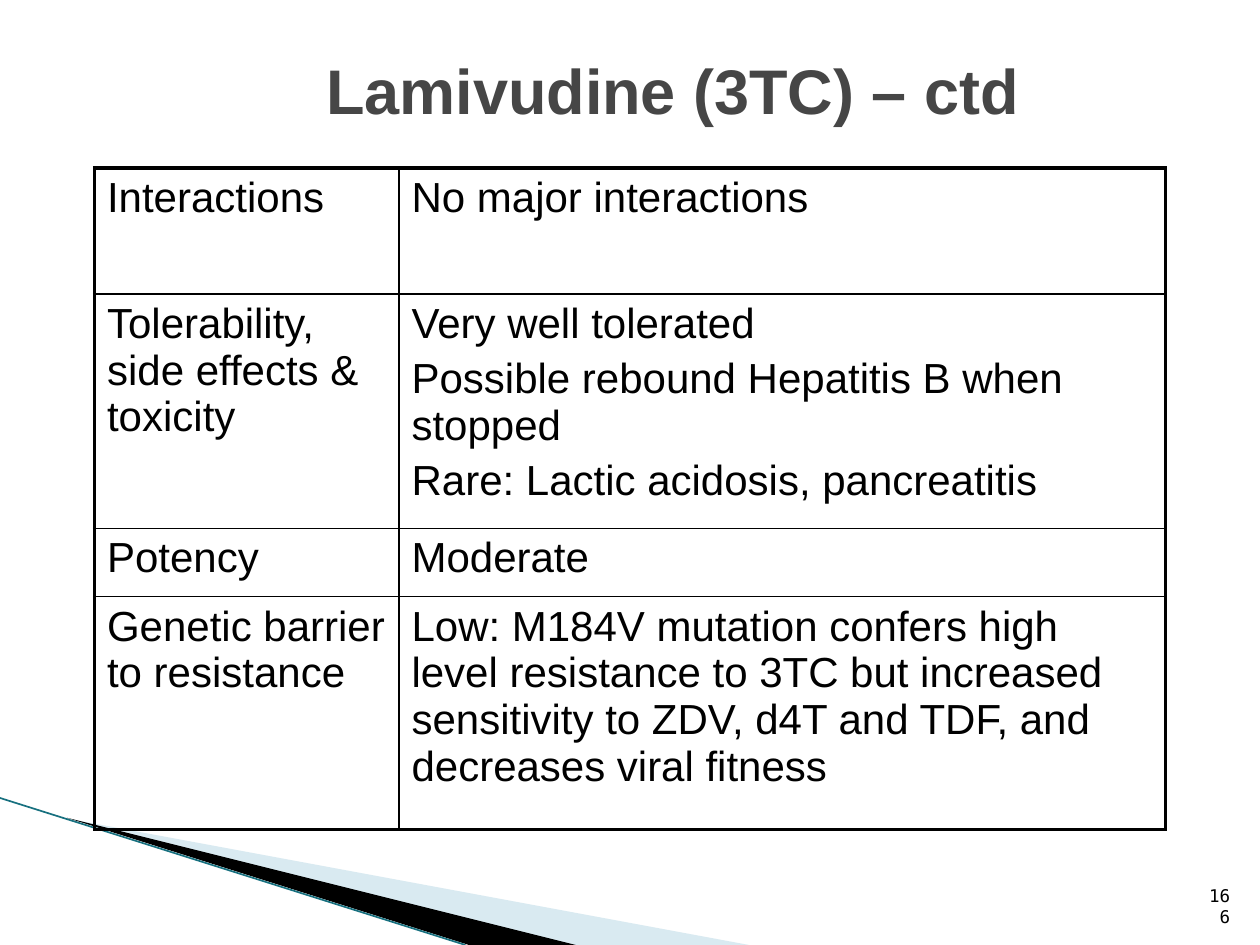
from lxml import etree
from pptx import Presentation
from pptx.dml.color import RGBColor
from pptx.enum import shapes, text
from pptx.oxml.ns import qn
from pptx.util import Pt

# Content
TITLE = "Lamivudine (3TC) – ctd"
PAGE = "166"
ROWS = [
    (72, ["Interactions"], ["No major interactions"]),
    (134, ["Tolerability, side effects & toxicity"],
     ["Very well tolerated",
      "Possible rebound Hepatitis B when stopped",
      "Rare: Lactic acidosis, pancreatitis"]),
    (39, ["Potency"], ["Moderate"]),
    (133, ["Genetic barrier to resistance"],
     ["Low: M184V mutation confers high level resistance to 3TC but increased "
      "sensitivity to ZDV, d4T and TDF, and decreases viral fitness"]),
]
COLS = [174, 438]

C = {"title": "464646", "ink": "000000", "pale": "A0CBDC", "edge": "17707F"}
WEDGES = [  # colour, opacity in percent, corners
    ("pale", 40, [(39.6, 468), (428, 540), (328, 540)]),
    ("ink", 100, [(38.2, 467.3), (329, 540), (268, 540)]),
]
TITLE_FMT = dict(name="Arial", size=Pt(36), bold=True)
CELL_FMT = dict(name="Arial", size=Pt(24))
PAGE_FMT = dict(name="DejaVu Sans Mono", size=Pt(10))
OUTER, INNER = 2.25, 1


def rgb(key):
    return RGBColor.from_string(C[key])


def write(tf, lines, fmt, color, align):
    for i, line in enumerate(lines):
        p = tf.paragraphs[0] if i == 0 else tf.add_paragraph()
        p.alignment = align
        if i:
            p.space_before = Pt(4.8)
        r = p.add_run()
        r.text = line
        for name, value in fmt.items():
            setattr(r.font, name, value)
        r.font.color.rgb = rgb(color)


def set_borders(cell, widths):
    tcPr = cell._tc.get_or_add_tcPr()
    for i, (side, width) in enumerate(widths.items()):
        ln = etree.Element(qn("a:ln" + side), w=str(Pt(width)))
        fill = etree.SubElement(ln, qn("a:solidFill"))
        etree.SubElement(fill, qn("a:srgbClr"), val=C["ink"])
        tcPr.insert(i, ln)


prs = Presentation()
prs.slide_width, prs.slide_height = Pt(720), Pt(540)
s = prs.slides.add_slide(prs.slide_layouts[5])

# Corner wedges
for color, opacity, corners in WEDGES:
    points = [(Pt(x), Pt(y)) for x, y in corners]
    fb = s.shapes.build_freeform(*points[0])
    fb.add_line_segments(points[1:])
    sp = fb.convert_to_shape()
    sp.shadow.inherit = False
    sp.fill.solid()
    sp.fill.fore_color.rgb = rgb(color)
    sp.line.fill.background()
    if opacity < 100:
        clr = sp._element.spPr.find(".//" + qn("a:srgbClr"))
        etree.SubElement(clr, qn("a:alpha"), val=str(opacity * 1000))

# Wedge edge line
line = s.shapes.add_connector(shapes.MSO_CONNECTOR.STRAIGHT,
                              Pt(0), Pt(456), Pt(266), Pt(540))
line.line.color.rgb = rgb("edge")
line.line.width = Pt(0.95)
etree.SubElement(line._element.spPr, qn("a:effectLst"))

# Title
title = s.shapes.title
title.left, title.top, title.width, title.height = Pt(78), Pt(18), Pt(613), Pt(66)
tf = title.text_frame
tf.auto_size = text.MSO_AUTO_SIZE.NONE
tf.vertical_anchor = text.MSO_ANCHOR.MIDDLE
write(tf, [TITLE], TITLE_FMT, "title", text.PP_ALIGN.CENTER)

# Table
height = sum(row[0] for row in ROWS)
table = s.shapes.add_table(len(ROWS), len(COLS), Pt(54), Pt(96),
                           Pt(sum(COLS)), Pt(height)).table
table.first_row = table.horz_banding = False
for col, width in zip(table.columns, COLS):
    col.width = Pt(width)
last_row, last_col = len(ROWS) - 1, len(COLS) - 1
for i, (row_height, *cells) in enumerate(ROWS):
    table.rows[i].height = Pt(row_height)
    for j, lines in enumerate(cells):
        cell = table.cell(i, j)
        cell.fill.background()
        write(cell.text_frame, lines, CELL_FMT, "ink", text.PP_ALIGN.LEFT)
        at_edge = {"L": j == 0, "R": j == last_col, "T": i == 0, "B": i == last_row}
        set_borders(cell, {k: OUTER if v else INNER for k, v in at_edge.items()})

# Page number
tf = s.shapes.add_textbox(Pt(681), Pt(504.5), Pt(29), Pt(29)).text_frame
tf.word_wrap = True
tf.vertical_anchor = text.MSO_ANCHOR.BOTTOM
write(tf, [PAGE], PAGE_FMT, "ink", text.PP_ALIGN.RIGHT)

prs.save("out.pptx")
